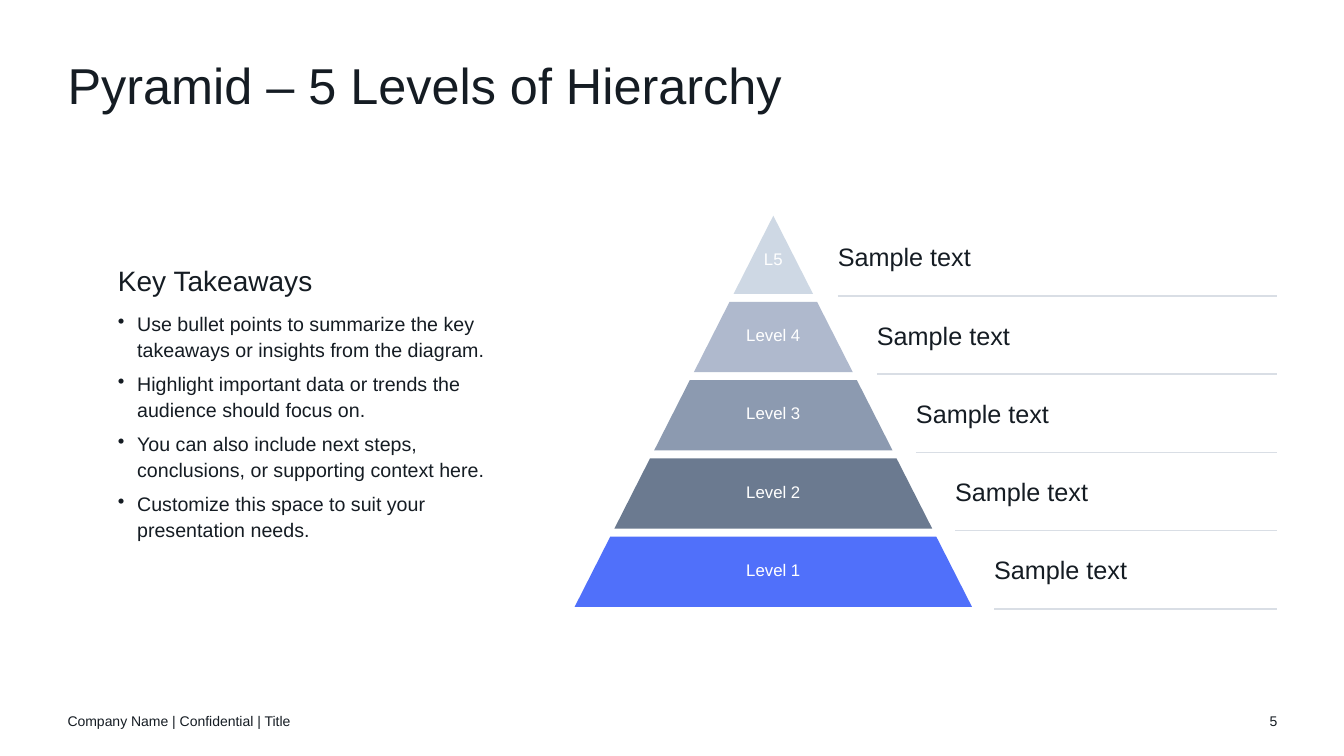
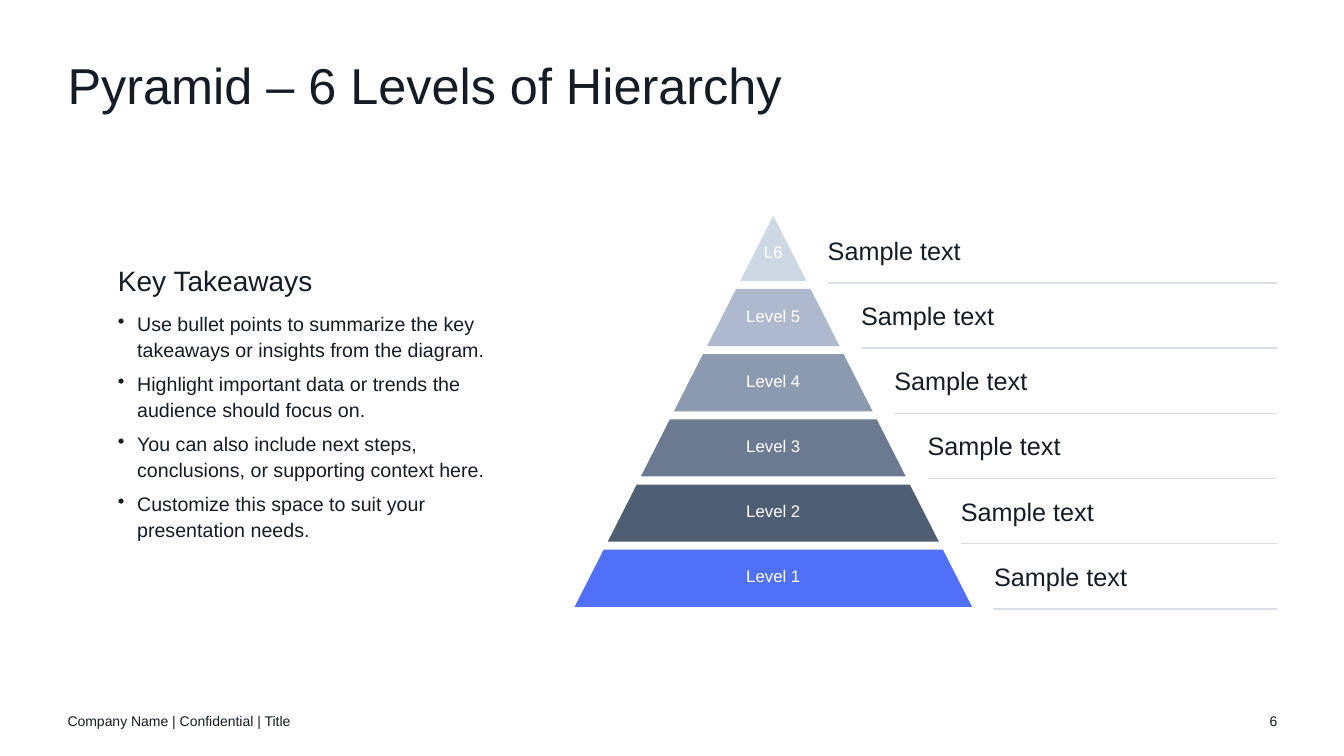
from lxml.etree import SubElement
from pptx import Presentation
from pptx.dml.color import RGBColor
from pptx.enum.shapes import MSO_CONNECTOR as Link
from pptx.enum.text import MSO_ANCHOR as Anchor, MSO_AUTO_SIZE as Fit, PP_ALIGN as Align
from pptx.oxml.ns import qn
from pptx.util import Inches, Pt

INK = RGBColor(0x15, 0x1C, 0x23)
WHITE = RGBColor(0xFF, 0xFF, 0xFF)
RULE = RGBColor(0xD9, 0xDE, 0xE5)
BLUE = RGBColor(0x50, 0x70, 0xFA)
GREYS = [RGBColor.from_string(c) for c in ("CED8E4", "AFB9CD", "8C9AB0", "6B7A90", "4E5E73")]
FONT = "Arial"

# Page grid, in inches
LEFT, RIGHT = 0.67, 12.67
FOOT = 6.95

# Pyramid: centre line, apex, base, half of the base, gap between bands
MID, TOP, BASE, HALF = 7.67, 2.14, 6.02, 1.97
GAP = 0.08
LAST = 9.86  # left end of the lowest rule
ROW = 0.3    # height of a label

POINTS = [
    "Use bullet points to summarize the key takeaways or insights from the diagram.",
    "Highlight important data or trends the audience should focus on.",
    "You can also include next steps, conclusions, or supporting context here.",
    "Customize this space to suit your presentation needs.",
]
# Number of levels, page number, left end of the highest rule
DECK = [(5, 5, 8.31), (6, 6, 8.21)]


def style(para, text, size, color=INK, align=Align.LEFT):
    """Fill one paragraph and set its font."""
    para.text = text
    para.alignment = align
    para.font.name = FONT
    para.font.size = Pt(size)
    para.font.color.rgb = color


def clear(shape, x, y, w, h, anchor=Anchor.MIDDLE):
    """Place a text shape without margins and return its frame."""
    shape.left, shape.top, shape.width, shape.height = map(Inches, (x, y, w, h))
    frame = shape.text_frame
    frame.margin_left = frame.margin_right = frame.margin_top = frame.margin_bottom = 0
    frame.word_wrap = True
    frame.auto_size = Fit.NONE
    frame.vertical_anchor = anchor
    return frame


prs = Presentation()
prs.slide_width, prs.slide_height = Inches(13.33), Inches(7.5)

for count, page, first in DECK:
    slide = prs.slides.add_slide(prs.slide_layouts[5])
    shapes = slide.shapes

    # Title
    head = clear(shapes.title, LEFT, 0.6, RIGHT - LEFT, 0.6, Anchor.TOP).paragraphs[0]
    style(head, f"Pyramid – {count} Levels of Hierarchy", 36)
    head.line_spacing = 0.9

    # Single-line texts: text, left, top, width, height, size, colour, alignment
    texts = [
        ("Company Name | Confidential | Title", LEFT, FOOT, 4.5, 0.4, 10, INK, Align.LEFT),
        (str(page), RIGHT - 0.5, FOOT, 0.5, 0.4, 10, INK, Align.RIGHT),
    ]

    # Bands from the apex down, each with its rule
    step = (BASE - TOP) / count
    bands = shapes.add_group_shape().shapes
    for i, color in enumerate(GREYS[:count - 1] + [BLUE]):
        low = TOP + step * (i + 1)
        high = low - step + (GAP if i else 0)
        wide, slim = [HALF * (y - TOP) / (BASE - TOP) for y in (low, high)]
        edge = [(MID + wide, low), (MID + slim, high)]
        if i:
            edge.append((MID - slim, high))
        path = bands.build_freeform(Inches(MID - wide), Inches(low))
        path.add_line_segments([(Inches(x), Inches(y)) for x, y in edge], close=True)
        band = path.convert_to_shape()
        band.shadow.inherit = False
        band.fill.solid()
        band.fill.fore_color.rgb = color
        band.line.fill.background()

        x = first + (LAST - first) * i / (count - 1)
        y = low + 0.02
        rule = shapes.add_connector(Link.STRAIGHT, *map(Inches, (x, y, RIGHT, y)))
        rule.line.color.rgb = RULE
        rule.line.width = Pt(1)
        SubElement(rule._element.spPr, qn("a:effectLst"))

        row = y - step / 2 - ROW / 2
        name = f"Level {count - i}" if i else f"L{count}"
        drop = 0 if i else 0.02
        texts += [
            ("Sample text", x, row, 2.8, ROW, 18, INK, Align.LEFT),
            (name, MID - 0.5, row + drop, 1, ROW, 12, WHITE, Align.CENTER),
        ]

    for text, x, y, w, h, size, color, align in texts:
        frame = clear(shapes.add_textbox(0, 0, 0, 0), x, y, w, h)
        style(frame.paragraphs[0], text, size, color, align)

    # Takeaways
    notes = clear(shapes.add_textbox(0, 0, 0, 0), 1.17, 1.8, 3.99, 4.35)
    style(notes.paragraphs[0], "Key Takeaways", 20)
    notes.paragraphs[0].space_after = Pt(3)
    for point in POINTS:
        para = notes.add_paragraph()
        props = para._p.get_or_add_pPr()
        props.set("marL", str(Inches(0.19)))
        props.set("indent", str(-Inches(0.19)))
        SubElement(props, qn("a:buChar"), char="•")
        style(para, point, 14)
    for para in notes.paragraphs:
        para.line_spacing = 1.1
        para.space_before = Pt(6)

prs.save("out.pptx")
